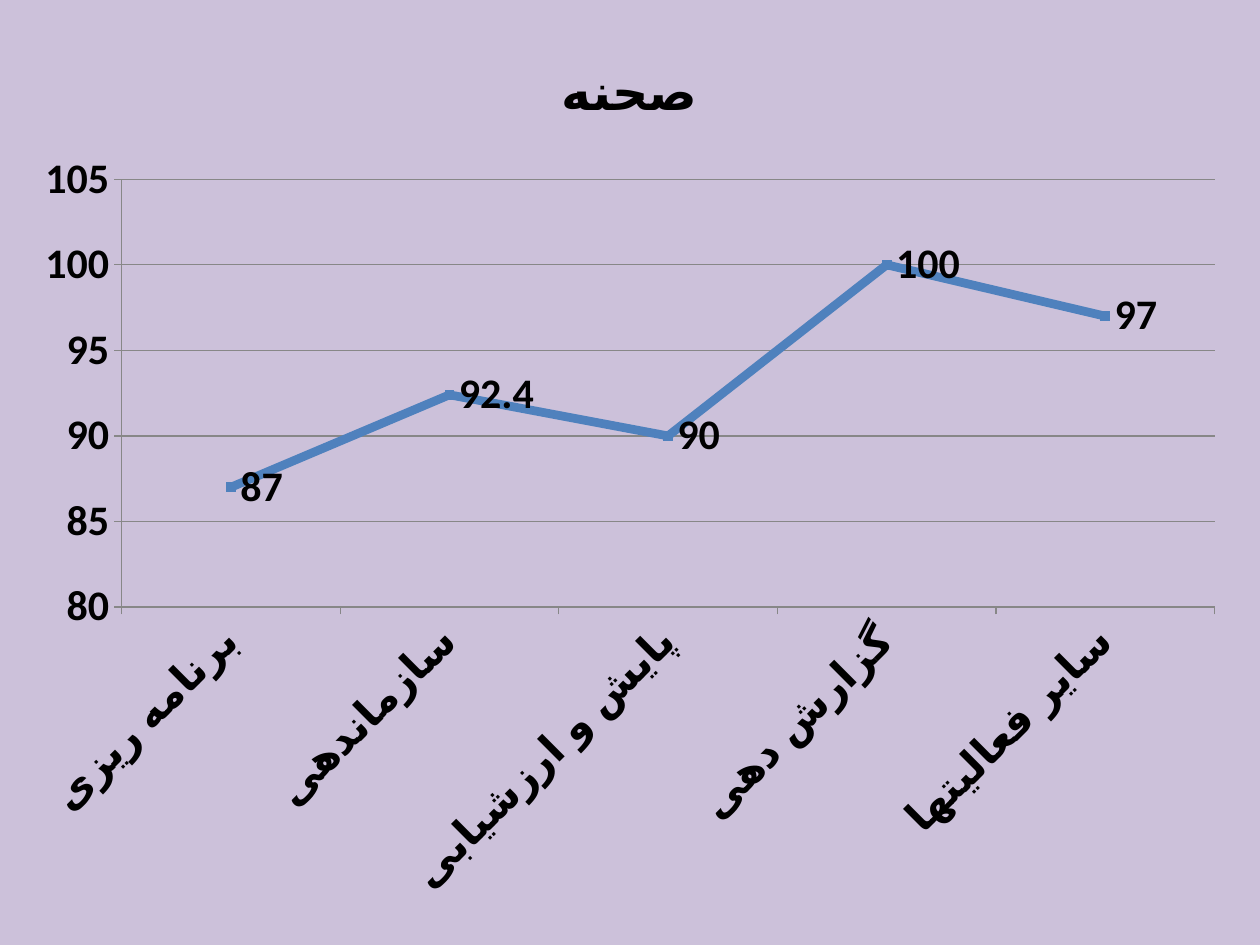
from pptx import Presentation
from pptx import util as u
from pptx.chart.data import CategoryChartData
from pptx.dml.color import RGBColor
from pptx.enum import chart as kinds

COLORS = {"background": "CCC1DA", "line": "4F81BD", "text": "000000", "axis": "878787"}
SCORES = {
    "برنامه ریزی": 87,
    "سازماندهی": 92.4,
    "پایش و ارزشیابی": 90,
    "گزارش دهی": 100,
    "سایر فعالیتها": 97,
}


class SlideBuilder:
    font_name = "Calibri"
    font_size = 24
    title_size = 28.8

    def __init__(self, deck):
        self.deck = deck
        self.slide = deck.slides.add_slide(deck.slide_layouts[6])
        self.paint(self.slide.background.fill, "background")

    def paint(self, fill, color):
        fill.solid()
        fill.fore_color.rgb = RGBColor.from_string(COLORS[color])

    def style_font(self, font, size):
        font.name = self.font_name
        font.size = u.Pt(size)
        font.bold = True
        font.color.rgb = RGBColor.from_string(COLORS["text"])

    def style_line(self, line, color, width):
        self.paint(line.fill, color)
        line.width = u.Pt(width)

    def line_chart(self, title, scores, left, top, width, height):
        data = CategoryChartData()
        data.categories = list(scores)
        data.add_series(title, list(scores.values()))
        across, down = self.deck.slide_width, self.deck.slide_height
        chart = self.slide.shapes.add_chart(
            kinds.XL_CHART_TYPE.LINE_MARKERS,
            int(left * across), int(top * down),
            int(width * across), int(height * down), data,
        ).chart
        self.style_font(chart.font, self.font_size)
        chart.has_legend = False
        chart.has_title = True
        chart.chart_title.include_in_layout = False
        para = chart.chart_title.text_frame.paragraphs[0]
        para.text = title
        self.style_font(para.font, self.title_size)
        self.style_axes(chart)
        self.style_series(chart.plots[0])

    def style_axes(self, chart):
        for axis in (chart.category_axis, chart.value_axis):
            axis.major_tick_mark = kinds.XL_TICK_MARK.OUTSIDE
            axis.minor_tick_mark = kinds.XL_TICK_MARK.NONE
            self.style_line(axis.format.line, "axis", 0.75)
        scale = chart.value_axis
        scale.minimum_scale, scale.maximum_scale, scale.major_unit = 80, 105, 5
        scale.has_major_gridlines = True
        self.style_line(scale.major_gridlines.format.line, "axis", 0.75)

    def style_series(self, plot):
        plot.vary_by_categories = False
        series = plot.series[0]
        series.smooth = False
        self.style_line(series.format.line, "line", 5)
        series.marker.style = kinds.XL_MARKER_STYLE.SQUARE
        series.marker.size = 5
        self.paint(series.marker.format.fill, "line")
        self.paint(series.marker.format.line.fill, "line")
        labels = series.data_labels
        labels.show_value = True
        labels.position = kinds.XL_LABEL_POSITION.RIGHT
        self.style_font(labels.font, self.font_size)


def main():
    deck = Presentation()
    deck.slide_width, deck.slide_height = u.Inches(10), u.Inches(7.5)
    page = SlideBuilder(deck)
    side, edge = 1 / 60, 1 / 30
    page.line_chart("صحنه", SCORES, side, edge, 1 - 2 * side, 1 - 2 * edge)
    deck.save("out.pptx")


if __name__ == "__main__":
    main()
